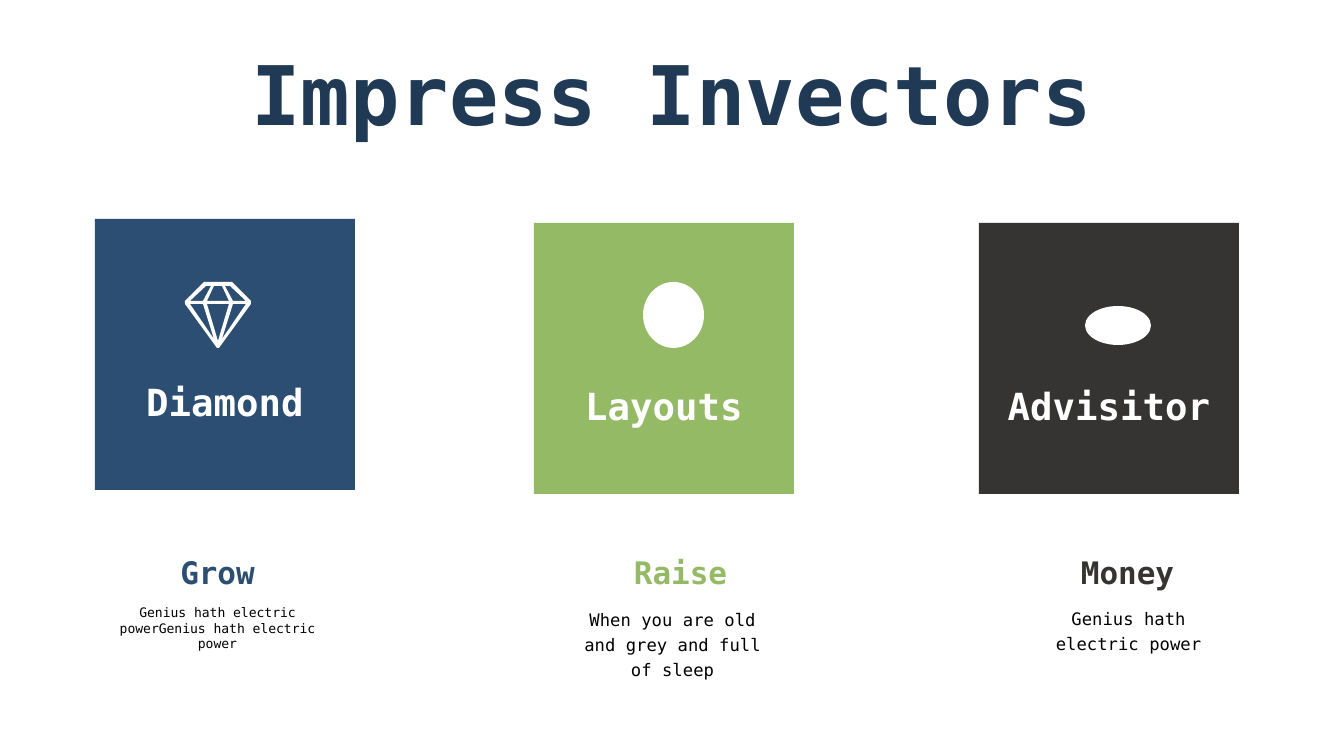
from lxml import etree
from pptx import Presentation
from pptx.dml.color import RGBColor
from pptx.enum.shapes import MSO_SHAPE
from pptx.enum.text import MSO_ANCHOR, MSO_AUTO_SIZE, PP_ALIGN
from pptx.util import Pt

RECT, OVAL = MSO_SHAPE.RECTANGLE, MSO_SHAPE.OVAL
MIDDLE, TOP = MSO_ANCHOR.MIDDLE, MSO_ANCHOR.TOP
CENTER, NO_FIT = PP_ALIGN.CENTER, MSO_AUTO_SIZE.NONE
PX = 914400 / 134.4
FONT = "DejaVu Sans Mono"
WHITE, BLACK, NAVY = "FFFFFF", "000000", "203A55"


def paint(shape, color):
    shape.shadow.inherit = False
    shape.fill.solid()
    shape.fill.fore_color.rgb = RGBColor.from_string(color)
    shape.line.fill.background()


def write(shape, text, size, color, bold=True, anchor=TOP, spacing=1.0):
    tf = shape.text_frame
    tf.word_wrap = True
    tf.auto_size = NO_FIT
    tf.vertical_anchor = anchor
    p = tf.paragraphs[0]
    p.alignment = CENTER
    p.line_spacing = spacing
    r = p.add_run()
    r.text = text
    r.font.name = FONT
    r.font.size = Pt(size)
    r.font.bold = bold
    r.font.color.rgb = RGBColor.from_string(color)


prs = Presentation()
prs.slide_width, prs.slide_height = round(1344 * PX), round(756 * PX)
s = prs.slides.add_slide(prs.slide_layouts[5])

# Title
title = s.shapes.title
title.left, title.top, title.width, title.height = [
    round(v * PX) for v in (67, 30, 1210, 126)]
write(title, "Impress Invectors", 44, NAVY, anchor=MIDDLE)

# Columns: (label, color, card x, y), (heading, x), (text, x, y, size, spacing)
columns = [
    (("Diamond", "2B4E72", 95, 219), ("Grow", 101),
     ("Genius hath electric powerGenius hath electric power", 101, 598, 7, 1.0)),
    (("Layouts", "94BA65", 534, 223), ("Raise", 564),
     ("When you are old and grey and full of sleep", 556, 599, 9.2, 1.2)),
    (("Advisitor", "353432", 979, 223), ("Money", 1011),
     ("Genius hath electric power", 1012, 598, 9.2, 1.2)),
]
for (label, color, x, y), (heading, hx), (text, tx, ty, size, spacing) in columns:
    card = s.shapes.add_shape(RECT, *[round(v * PX) for v in (x, y, 260, 271)])
    paint(card, color)
    # The deep top inset leaves room for the icon
    card.text_frame.margin_top = round(100 * PX)
    write(card, label, 20, WHITE, anchor=MIDDLE)

    box = s.shapes.add_textbox(*[round(v * PX) for v in (hx, 554, 233, 46)])
    write(box, heading, 16.6, color, spacing=0.8)
    box = s.shapes.add_textbox(*[round(v * PX) for v in (tx, ty, 233, 62)])
    write(box, text, size, BLACK, bold=False, spacing=spacing)

# Diamond icon: outline with facets cut out, the right ones mirrored at x = 218
outline = [(204, 282), (232, 282), (251, 301), (251, 304),
           (219, 348), (217, 348), (185, 304), (185, 301)]
left_facets = [[(206, 286), (211, 286), (203, 301), (190, 301)],
               [(190, 304), (203, 304), (214, 339)]]
middle_facets = [[(214, 286), (222, 286), (229, 301), (207, 301)],
                 [(207, 304), (229, 304), (218, 341)]]
right_facets = [[(436 - x, y) for x, y in facet] for facet in left_facets]
fb = s.shapes.build_freeform(*outline[0], scale=PX)
fb.add_line_segments(outline[1:])
for facet in left_facets + middle_facets + right_facets:
    fb.move_to(*facet[0])
    fb.add_line_segments(facet[1:])
paint(fb.convert_to_shape(), WHITE)

# Plain icons on the other two cards
for x, y, w, h in [(643, 282, 61, 66), (1085, 306, 66, 39)]:
    paint(s.shapes.add_shape(OVAL, *[round(v * PX) for v in (x, y, w, h)]), WHITE)

prs.save("out.pptx")
